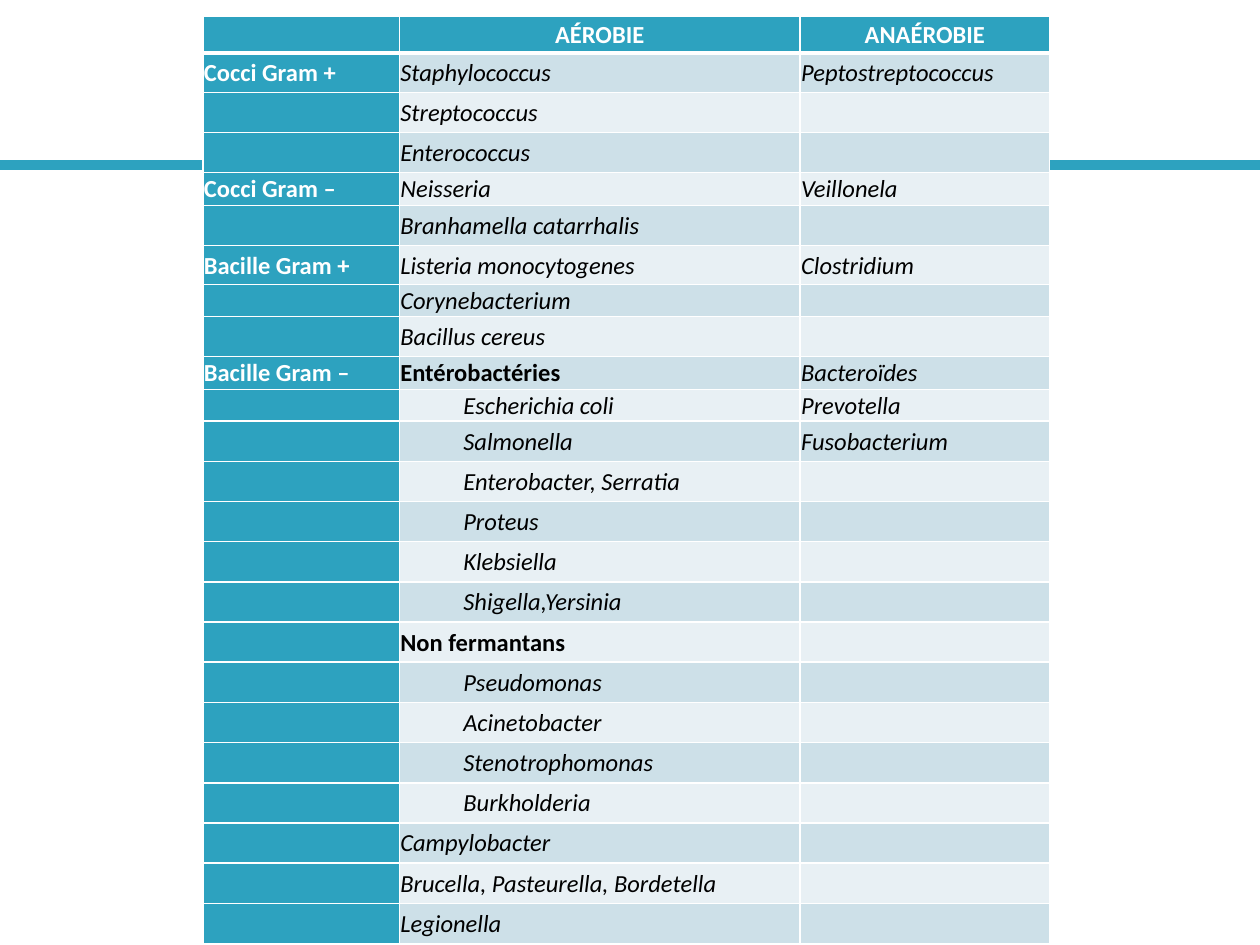
from dataclasses import dataclass

from lxml.etree import SubElement
from pptx import Presentation
from pptx.dml.color import RGBColor
from pptx.enum.shapes import MSO_CONNECTOR
from pptx.enum.text import MSO_ANCHOR, PP_ALIGN
from pptx.oxml.ns import qn
from pptx.slide import Slide
from pptx.table import Table, _Cell
from pptx.util import Cm, Pt

TEAL = RGBColor(0x2D, 0xA2, 0xBF)
DARK_BAND = RGBColor(0xCD, 0xE0, 0xE8)
LIGHT_BAND = RGBColor(0xE8, 0xF0, 0xF4)
WHITE = RGBColor(0xFF, 0xFF, 0xFF)
BLACK = RGBColor(0x00, 0x00, 0x00)

FONT = "Calibri"
COLUMN_WIDTHS = (3.96, 8.08, 5.03)
HEADINGS = ("", "AÉROBIE", "ANAÉROBIE")
HEADING_HEIGHT = 0.74


@dataclass(frozen=True)
class Germ:
    aerobic: str
    group: str = ""
    anaerobic: str = ""
    height: float = 0.81
    family: bool = False
    indented: bool = False


GERMS = (
    Germ("Staphylococcus", "Cocci Gram +", "Peptostreptococcus", height=0.79),
    Germ("Streptococcus"),
    Germ("Enterococcus"),
    Germ("Neisseria", "Cocci Gram –", "Veillonela", height=0.66),
    Germ("Branhamella catarrhalis"),
    Germ("Listeria monocytogenes", "Bacille Gram +", "Clostridium", height=0.79),
    Germ("Corynebacterium", height=0.64),
    Germ("Bacillus cereus"),
    Germ("Entérobactéries", "Bacille Gram –", "Bacteroïdes", height=0.66, family=True),
    Germ("Escherichia coli", anaerobic="Prevotella", height=0.64, indented=True),
    Germ("Salmonella", anaerobic="Fusobacterium", indented=True),
    Germ("Enterobacter, Serratia", indented=True),
    Germ("Proteus", indented=True),
    Germ("Klebsiella", indented=True),
    Germ("Shigella,Yersinia", indented=True),
    Germ("Non fermantans", family=True),
    Germ("Pseudomonas", indented=True),
    Germ("Acinetobacter", indented=True),
    Germ("Stenotrophomonas", indented=True),
    Germ("Burkholderia", indented=True),
    Germ("Campylobacter"),
    Germ("Brucella, Pasteurella, Bordetella"),
    Germ("Legionella"),
)


def draw_rule(page: Slide, width: int) -> None:
    rule = page.shapes.add_connector(MSO_CONNECTOR.STRAIGHT, 0, Cm(3.33), width, Cm(3.33))
    rule.line.color.rgb = TEAL
    rule.line.width = Pt(6)
    SubElement(rule._element.spPr, qn("a:effectLst"))


def set_borders(cell: _Cell, top: float, bottom: float) -> None:
    properties = cell._tc.get_or_add_tcPr()
    for side, width in (("L", 1), ("R", 1), ("T", top), ("B", bottom)):
        line = SubElement(properties, qn(f"a:ln{side}"), w=str(Pt(width)))
        fill = SubElement(line, qn("a:solidFill"))
        SubElement(fill, qn("a:srgbClr"), val=str(WHITE))


def fill_cell(cell: _Cell, text: str, fill: RGBColor, color: RGBColor = BLACK,
              bold: bool = False, centered: bool = False, indented: bool = False,
              top: float = 1, bottom: float = 1) -> None:
    set_borders(cell, top, bottom)
    cell.fill.solid()
    cell.fill.fore_color.rgb = fill
    cell.vertical_anchor = MSO_ANCHOR.MIDDLE
    cell.margin_left = cell.margin_right = cell.margin_top = Cm(0.02)
    cell.margin_bottom = 0
    para = cell.text_frame.paragraphs[0]
    if not text:
        # Small end mark keeps empty cells from stretching their row
        SubElement(para._p, qn("a:endParaRPr"), sz="1200")
        return
    para.text = text
    para.alignment = PP_ALIGN.CENTER if centered else PP_ALIGN.LEFT
    if indented:
        para.level = 1
        para._p.get_or_add_pPr().set("marL", str(Cm(1.27)))
    for span in para.runs:
        span.font.name = FONT
        span.font.size = Pt(14)
        span.font.bold = bold
        span.font.italic = not bold
        span.font.color.rgb = color


def fill_germ_row(table: Table, row: int, germ: Germ) -> None:
    band = DARK_BAND if row % 2 else LIGHT_BAND
    top = 3 if row == 1 else 1
    table.rows[row].height = Cm(germ.height)
    fill_cell(table.cell(row, 0), germ.group, TEAL, WHITE, bold=True, top=top)
    fill_cell(table.cell(row, 1), germ.aerobic, band, bold=germ.family,
              indented=germ.indented, top=top)
    fill_cell(table.cell(row, 2), germ.anaerobic, band, top=top)


def draw_table(page: Slide) -> None:
    height = HEADING_HEIGHT + sum(germ.height for germ in GERMS)
    table = page.shapes.add_table(
        len(GERMS) + 1, len(HEADINGS), Cm(4.09), Cm(0.33),
        Cm(sum(COLUMN_WIDTHS)), Cm(height)).table
    table.first_col = True
    for column, width in zip(table.columns, COLUMN_WIDTHS):
        column.width = Cm(width)

    # Heading row
    table.rows[0].height = Cm(HEADING_HEIGHT)
    for column, heading in enumerate(HEADINGS):
        fill_cell(table.cell(0, column), heading, TEAL, WHITE, bold=True,
                  centered=True, bottom=3)

    # Bacteria rows
    for row, germ in enumerate(GERMS, start=1):
        fill_germ_row(table, row, germ)


def main() -> None:
    deck = Presentation()
    deck.slide_width, deck.slide_height = Cm(25.4), Cm(19.05)
    page = deck.slides.add_slide(deck.slide_layouts[6])
    draw_rule(page, deck.slide_width)
    draw_table(page)
    deck.save("out.pptx")


if __name__ == "__main__":
    main()
